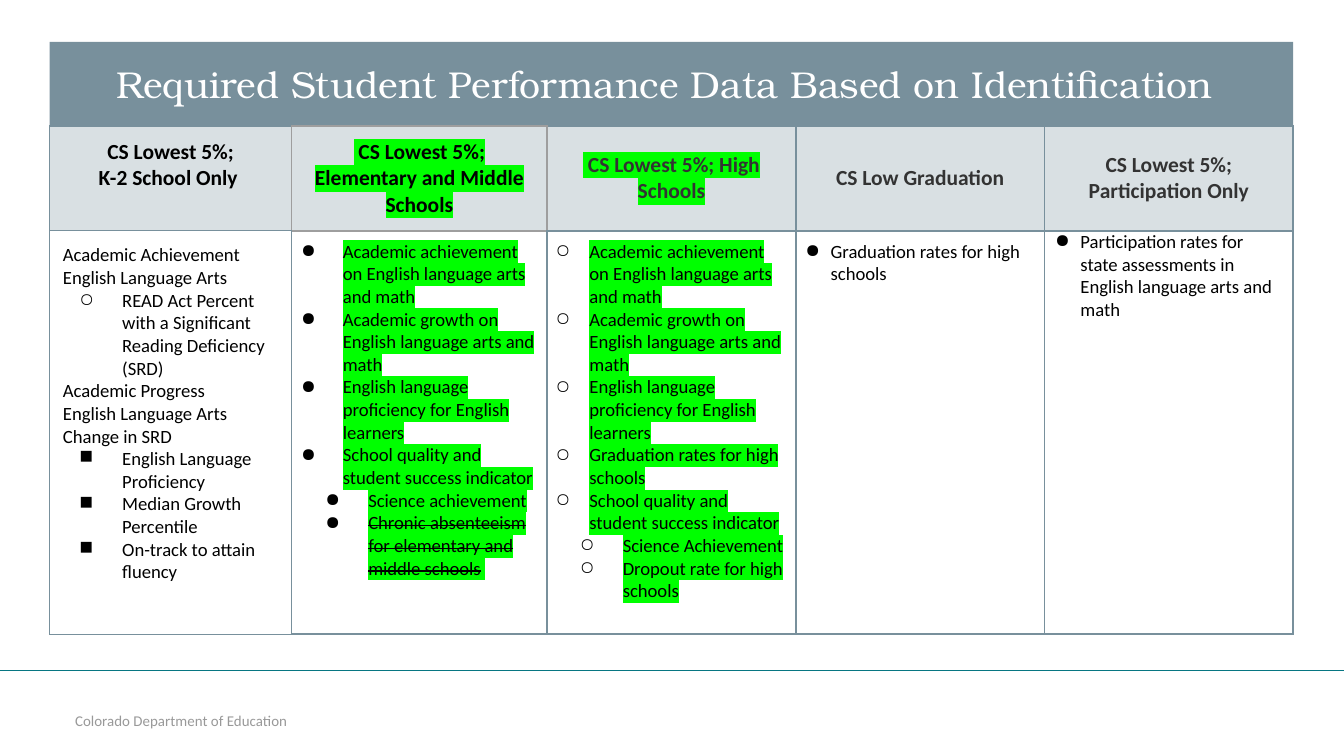
from lxml.etree import SubElement
from pptx import Presentation
from pptx.dml.color import RGBColor
from pptx.enum.shapes import MSO_CONNECTOR, MSO_SHAPE
from pptx.enum.text import MSO_ANCHOR, PP_ALIGN
from pptx.oxml import parse_xml
from pptx.oxml.ns import nsdecls, qn
from pptx.util import Cm, Pt

COLORS = {
    "slate": "78909C", "grey": "9E9E9E", "teal": "077682", "footer": "999999",
    "black": "000000", "dark": "333333", "white": "FFFFFF", "mark": "00FF00",
}
BULLETS = {
    "read": ("○", 1, 1.12, 0.81),
    "square": ("■", 2, 1.12, 0.81),
    "dot": ("●", 0, 0.79, 0.81),
    "subdot": ("●", 0, 1.27, 0.81),
    "circle": ("○", 1, 0.64, 0.66),
    "subcircle": ("○", 1, 1.27, 0.81),
    "short": ("●", 0, 0.48, 0.48),
}
HEADERS = [
    ([" CS Lowest 5%; ", "K-2 School Only "], "black", False, (0.25, 0.25), MSO_ANCHOR.TOP),
    ([" CS Lowest 5%; Elementary and Middle Schools"], "black", True, (0.25, 0.25), MSO_ANCHOR.TOP),
    ([" CS Lowest 5%; High Schools"], "dark", True, (0.18, 0.18), MSO_ANCHOR.MIDDLE),
    (["CS Low Graduation"], "dark", False, (0.18, 0.18), MSO_ANCHOR.MIDDLE),
    (["CS Lowest 5%; Participation Only"], "dark", False, (0.2, 0), MSO_ANCHOR.MIDDLE),
]
SHARED = [
    "Academic achievement on English language arts and math",
    "Academic growth on English language arts and math",
    "English language proficiency for English learners",
]
GRADUATION = "Graduation rates for high schools"
QUALITY = "School quality and student success indicator"
BODIES = [
    ([("Academic Achievement", None),
      ("English Language Arts", None),
      ("READ Act Percent with a Significant Reading Deficiency (SRD)", "read"),
      ("Academic Progress", None),
      ("English Language Arts", None),
      ("Change in SRD", None),
      ("English Language Proficiency", "square"),
      ("Median Growth Percentile", "square"),
      ("On-track to attain fluency", "square")], False, (0.25, 0.25)),
    ([(text, "dot") for text in SHARED + [QUALITY]]
     + [("Science achievement", "subdot"),
        ("Chronic absenteeism for elementary and middle schools", "subdot")], True, (0.18, 0.18)),
    ([(text, "circle") for text in SHARED + [GRADUATION, QUALITY]]
     + [("Science Achievement", "subcircle"),
        ("Dropout rate for high schools", "subcircle")], True, (0.16, 0.18)),
    ([(GRADUATION, "short")], False, (0.18, 0.18)),
    ([("Participation rates for state assessments in English language arts and math", "short")],
     False, (0.2, 0)),
]
GREY_SIDES = {(0, 0): "R", (0, 1): "LRTB", (0, 2): "L", (1, 1): "T"}


def rgb(name):
    return RGBColor.from_string(COLORS[name])


class Slide:
    """Holds the text style and the current slide, and adds each kind of element."""

    def __init__(self, s, font="Calibri"):
        self.s, self.font = s, font

    def style(self, r, size, color, bold=False, marked=False, font=None):
        r.font.size, r.font.bold = Pt(size), bold
        r.font.name = font or self.font
        r.font.color.rgb = rgb(color)
        if marked:
            fill = r.font._element.find(qn("a:solidFill"))
            fill.addnext(parse_xml(f'<a:highlight {nsdecls("a")}>'
                                   f'<a:srgbClr val="{COLORS["mark"]}"/></a:highlight>'))

    def label(self, tf, text, size, color, font=None, left=0):
        tf.text = text
        tf.word_wrap = True
        tf.margin_left = Cm(left)
        tf.margin_right = tf.margin_top = tf.margin_bottom = 0
        p = tf.paragraphs[0]
        p.alignment = PP_ALIGN.LEFT
        self.style(p.runs[0], size, color, font=font)

    def text(self, box, text, size, color):
        sp = self.s.shapes.add_textbox(*map(Cm, box))
        self.label(sp.text_frame, text, size, color)

    def banner(self, box, text, size, fill, color, font, left):
        sp = self.s.shapes.add_shape(MSO_SHAPE.RECTANGLE, *map(Cm, box))
        sp.shadow.inherit = False
        sp.fill.solid()
        sp.fill.fore_color.rgb = rgb(fill)
        sp.line.fill.background()
        self.label(sp.text_frame, text, size, color, font, left)
        sp.text_frame.vertical_anchor = MSO_ANCHOR.MIDDLE

    def rule(self, y, width, color):
        line = self.s.shapes.add_connector(MSO_CONNECTOR.STRAIGHT, 0, Cm(y), Cm(width), Cm(y))
        line.line.color.rgb = rgb(color)
        line.line.width = Pt(0.75)
        SubElement(line._element.spPr, qn("a:effectLst"))

    def table(self, left, top, widths, heights):
        frame = self.s.shapes.add_table(len(heights), len(widths), Cm(left), Cm(top),
                                        Cm(sum(widths)), Cm(sum(heights)))
        table = frame.table
        table.first_row = table.horz_banding = False
        for column, width in zip(table.columns, widths):
            column.width = Cm(width)
        for row, height in zip(table.rows, heights):
            row.height = Cm(height)
        return table

    def cell(self, cell, texts, insets, fill, alpha=None, anchor=MSO_ANCHOR.TOP):
        side, end = insets
        cell.margin_left, cell.margin_right = Cm(side), Cm(max(side, end))
        cell.margin_top = cell.margin_bottom = Cm(end)
        cell.vertical_anchor = anchor
        cell.fill.solid()
        cell.fill.fore_color.rgb = rgb(fill)
        if alpha:
            color = cell._tc.tcPr.find(qn("a:solidFill"))[0]
            SubElement(color, qn("a:alpha"), val=str(alpha * 1000))
        cell.text_frame.text = "\n".join(texts)
        return cell.text_frame.paragraphs

    def borders(self, cell, grey_sides, width):
        for i, side in enumerate("LRTB"):
            color = COLORS["grey" if side in grey_sides else "slate"]
            cell._tc.tcPr.insert(i, parse_xml(
                f'<a:ln{side} {nsdecls("a")} w="{Pt(width)}"><a:solidFill>'
                f'<a:srgbClr val="{color}"/></a:solidFill></a:ln{side}>'))

    def bullet(self, p, kind):
        char, level, margin, hanging = BULLETS[kind]
        p.level = level
        pPr = p._p.get_or_add_pPr()
        pPr.set("marL", str(Cm(margin)))
        pPr.set("indent", str(-Cm(hanging)))
        SubElement(SubElement(pPr, qn("a:buClr")), qn("a:srgbClr"), val=COLORS["black"])
        SubElement(pPr, qn("a:buChar"), char=char)


def main():
    prs = Presentation()
    prs.slide_width, prs.slide_height = Cm(25.4), Cm(14.28)
    slide = Slide(prs.slides.add_slide(prs.slide_layouts[6]))

    slide.text((1.42, 13.44, 8.2, 0.33), "Colorado Department of Education", 8, "footer")
    slide.rule(12.67, 25.4, "teal")
    slide.banner((0.94, 0.79, 23.5, 1.59),
                 "Required Student Performance Data Based on Identification",
                 20, "slate", "white", "TeX Gyre Bonum", 1.27)

    table = slide.table(0.94, 2.38, [4.57, 4.83, 4.7, 4.7, 4.7], [1.98, 7.62])
    for col, (texts, color, marked, insets, anchor) in enumerate(HEADERS):
        for p in slide.cell(table.cell(0, col), texts, insets, "slate", 28, anchor):
            p.alignment = PP_ALIGN.CENTER
            slide.style(p.runs[0], 11.5, color, True, marked)
    for col, (items, marked, insets) in enumerate(BODIES):
        texts = [text for text, kind in items]
        paragraphs = slide.cell(table.cell(1, col), texts, insets, "white")
        for p, (text, kind) in zip(paragraphs, items):
            if kind:
                slide.bullet(p, kind)
            slide.style(p.runs[0], 10, "black", marked=marked)

    dropped = table.cell(1, 1).text_frame.paragraphs[-1]
    dropped.runs[0].font._element.set("strike", "sngStrike")
    r = dropped.add_run()
    r.text = " "
    slide.style(r, 10, "black", marked=True)

    for row in range(2):
        for col in range(len(HEADERS)):
            slide.borders(table.cell(row, col), GREY_SIDES.get((row, col), ""),
                          1 if col else 0.75)
    prs.save("out.pptx")


if __name__ == "__main__":
    main()
